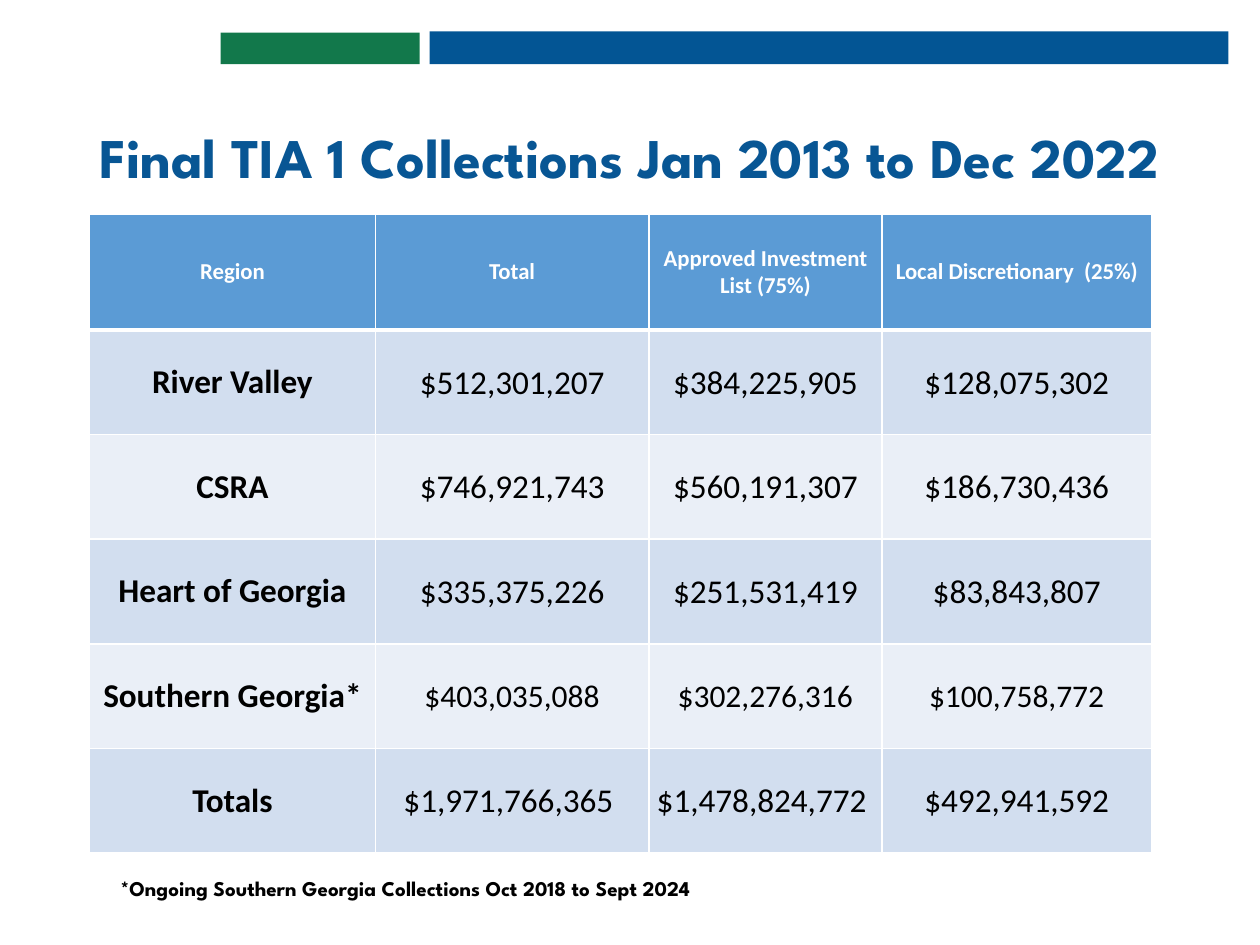
from lxml import etree
from pptx import Presentation
from pptx import util as u
from pptx.dml import color as col
from pptx.enum import shapes, text
from pptx.oxml import ns

HUES = {
    "blue": "035594", "green": "12784B", "title": "085694", "head": "5B9BD5",
    "dark": "D2DEEF", "light": "EAEFF7", "white": "FFFFFF", "black": "000000",
}
HEADS = ["Region", "Total", "Approved Investment List (75%)", "Local Discretionary  (25%)"]
ROWS = [
    ["River Valley", "$512,301,207", "$384,225,905", "$128,075,302"],
    ["CSRA", "$746,921,743", "$560,191,307", "$186,730,436"],
    ["Heart of Georgia", "$335,375,226", "$251,531,419", "$83,843,807"],
    ["Southern Georgia*", "$403,035,088", "$302,276,316", "$100,758,772"],
    ["Totals", "$1,971,766,365 ", "$1,478,824,772 ", "$492,941,592"],
]
WIDTHS = [2.27, 2.17, 1.85, 2.14]
HEAD_H, ROW_H = 0.92, 0.83


def rgb(name):
    return col.RGBColor.from_string(HUES[name])


def place(shape, box):
    shape.left, shape.top, shape.width, shape.height = map(u.Inches, box)


def write(para, words, font, size, hue, bold=True):
    run = para.add_run()
    run.text = words
    run.font.name = font
    run.font.size = u.Pt(size)
    run.font.bold = bold
    run.font.color.rgb = rgb(hue)


def add_bar(slide, box, hue):
    bar = slide.shapes.add_shape(shapes.MSO_SHAPE.RECTANGLE, *map(u.Inches, box))
    bar.shadow.inherit = False
    bar.fill.solid()
    bar.fill.fore_color.rgb = rgb(hue)
    bar.line.fill.background()


def add_title(slide, box):
    title = slide.shapes.title
    place(title, box)
    frame = title.text_frame
    frame.auto_size = text.MSO_AUTO_SIZE.NONE
    frame.vertical_anchor = text.MSO_ANCHOR.BOTTOM
    para = frame.paragraphs[0]
    para.alignment = text.PP_ALIGN.CENTER
    para.line_spacing = 0.9
    write(para, "Final TIA 1 Collections Jan 2013 to Dec 2022", "League Spartan", 32, "title")


def add_edges(cell, base):
    props = cell._tc.get_or_add_tcPr()
    for side, width in (("L", 1), ("R", 1), ("T", 1), ("B", base)):
        line = etree.SubElement(props, ns.qn(f"a:ln{side}"), w=str(u.Pt(width)))
        fill = etree.SubElement(line, ns.qn("a:solidFill"))
        etree.SubElement(fill, ns.qn("a:srgbClr"), val=HUES["white"])


def fill_cell(cell, words, row, pos):
    head = row == 0
    money = not head and pos > 0
    add_edges(cell, 3 if head else 1)
    cell.fill.solid()
    cell.fill.fore_color.rgb = rgb("head" if head else "dark" if row % 2 else "light")
    cell.vertical_anchor = text.MSO_ANCHOR.MIDDLE
    if money:
        cell.margin_left = cell.margin_right = cell.margin_top = u.Inches(0.01)
        cell.margin_bottom = 0
    para = cell.text_frame.paragraphs[0]
    para.alignment = text.PP_ALIGN.CENTER
    size = 13 if head else 18 if money and row == 4 else 19
    write(para, words, "Calibri", size, "white" if head else "black", not money)


def add_grid(slide, box):
    data = [HEADS] + ROWS
    frame = slide.shapes.add_table(len(data), len(HEADS), *map(u.Inches, box))
    table = frame.table
    for column, width in zip(table.columns, WIDTHS):
        column.width = u.Inches(width)
    for row, line in enumerate(data):
        table.rows[row].height = u.Inches(ROW_H if row else HEAD_H)
        for pos, words in enumerate(line):
            fill_cell(table.cell(row, pos), words, row, pos)


def add_note(slide, box):
    frame = slide.shapes.add_textbox(*map(u.Inches, box)).text_frame
    frame.word_wrap = True
    frame.vertical_anchor = text.MSO_ANCHOR.BOTTOM
    para = frame.paragraphs[0]
    para.line_spacing = 0.9
    write(para, "*Ongoing Southern Georgia Collections Oct 2018 to Sept 2024",
          "League Spartan", 12, "black")


def main():
    deck = Presentation()
    deck.slide_width, deck.slide_height = u.Inches(10), u.Inches(7.5)
    slide = deck.slides.add_slide(deck.slide_layouts[0])
    sub = slide.placeholders[1].element
    sub.getparent().remove(sub)
    add_bar(slide, (3.41, 0.25, 6.34, 0.26), "blue")
    add_bar(slide, (1.75, 0.26, 1.58, 0.25), "green")
    add_title(slide, (0, 0.93, 10, 0.63))
    add_grid(slide, (0.71, 1.7, sum(WIDTHS), HEAD_H + ROW_H * len(ROWS)))
    add_note(slide, (0.86, 6.84, 5.08, 0.36))
    deck.save("out.pptx")


if __name__ == "__main__":
    main()
